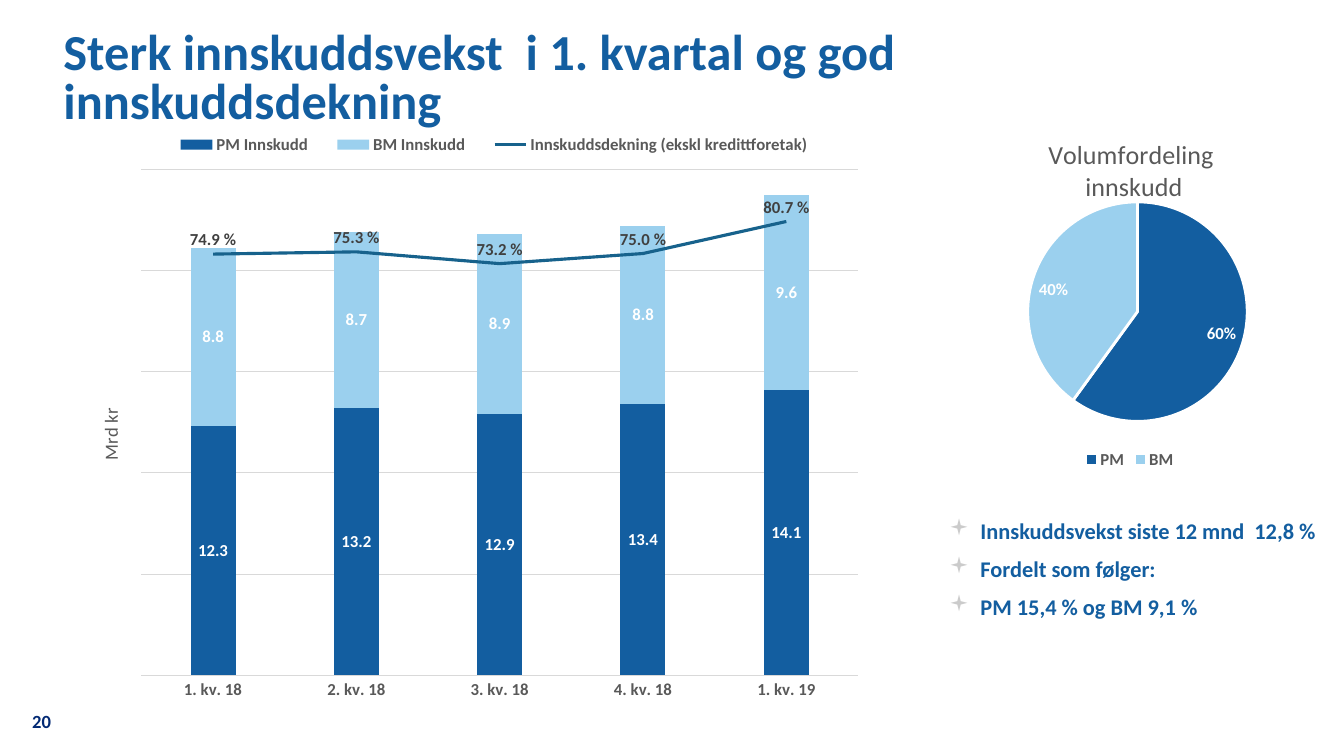
from dataclasses import dataclass

from pptx import Presentation
from pptx.chart.data import CategoryChartData
from pptx.dml.color import RGBColor
from pptx.enum.chart import XL_CHART_TYPE, XL_LABEL_POSITION, XL_LEGEND_POSITION
from pptx.enum.chart import XL_MARKER_STYLE, XL_TICK_LABEL_POSITION, XL_TICK_MARK
from pptx.oxml import parse_xml
from pptx.oxml.ns import nsdecls, qn
from pptx.oxml.xmlchemy import OxmlElement
from pptx.util import Cm, Pt


@dataclass(frozen=True)
class Theme:
    font: str = "Calibri"
    bullet_font: str = "Wingdings"
    blue: str = "135EA0"
    light_blue: str = "9BD0EE"
    line_blue: str = "17628C"
    navy: str = "032A74"
    grey: str = "595959"
    dark: str = "404040"
    rule: str = "D9D9D9"
    bullet: str = "CBCBCB"
    white: str = "FFFFFF"
    title_size: float = 36
    body_size: float = 16
    number_size: float = 13.3
    chart_title_size: float = 18.6
    axis_title_size: float = 13.3
    chart_size: float = 12


THEME = Theme()


def rgb(value):
    return RGBColor.from_string(value)


def style_font(font, size, color, bold=True):
    font.name = THEME.font
    font.size = Pt(size)
    font.bold = bold
    font.color.rgb = rgb(color)


def add_run(paragraph, text, size, color, bold=True):
    run = paragraph.add_run()
    run.text = text
    style_font(run.font, size, color, bold)


def add_text(slide, box, text, size, color, wrap=True, spacing=None):
    frame = slide.shapes.add_textbox(*map(Cm, box)).text_frame
    frame.word_wrap = wrap
    frame.margin_left = frame.margin_right = frame.margin_top = frame.margin_bottom = 0
    paragraph = frame.paragraphs[0]
    paragraph.line_spacing = spacing
    add_run(paragraph, text, size, color)


def add_bullet_mark(paragraph):
    properties = paragraph._p.get_or_add_pPr()
    properties.set("marL", str(Cm(0.79)))
    properties.set("indent", str(-Cm(0.79)))
    color = OxmlElement("a:buClr")
    value = OxmlElement("a:srgbClr")
    value.set("val", THEME.bullet)
    color.append(value)
    font = OxmlElement("a:buFont")
    font.set("typeface", THEME.bullet_font)
    mark = OxmlElement("a:buChar")
    mark.set("char", "▪")
    properties.extend([color, font, mark])


def add_bullets(slide, box, lines):
    frame = slide.shapes.add_textbox(*map(Cm, box)).text_frame
    frame.word_wrap = True
    for index, line in enumerate(lines):
        paragraph = frame.add_paragraph() if index else frame.paragraphs[0]
        if index:
            paragraph.space_before = Pt(8)
        add_bullet_mark(paragraph)
        add_run(paragraph, line, THEME.body_size, THEME.blue)


def set_layout(element, index, inner=False, **fractions):
    for old in element.findall(qn("c:layout")):
        element.remove(old)
    target = '<c:layoutTarget val="inner"/>' if inner else ""
    modes = "".join(f'<c:{key}Mode val="edge"/>' for key in fractions if key in "xy")
    values = "".join(f'<c:{key} val="{value}"/>' for key, value in fractions.items())
    element.insert(index, parse_xml(
        f'<c:layout {nsdecls("c")}><c:manualLayout>{target}{modes}{values}'
        "</c:manualLayout></c:layout>"))


def add_chart(slide, kind, box, categories, series, legend_position):
    data = CategoryChartData()
    data.categories = categories
    for name, values in series:
        data.add_series(name, values)
    chart = slide.shapes.add_chart(kind, *map(Cm, box), data).chart
    style_font(chart.font, THEME.chart_size, THEME.grey)
    chart.has_title = False
    chart.has_legend = True
    chart.legend.position = legend_position
    chart.legend.include_in_layout = False
    style_font(chart.legend.font, THEME.chart_size, THEME.grey)
    return chart


def label_series(series, number_format, color, position=None):
    labels = series.data_labels
    labels.show_value = True
    labels.number_format = number_format
    labels.number_format_is_linked = False
    style_font(labels.font, THEME.chart_size, color)
    if position is not None:
        labels.position = position


def fill_solid(item, color):
    item.format.fill.solid()
    item.format.fill.fore_color.rgb = rgb(color)


def move_to_line_plot(chart, series):
    element = series._element
    bar_chart = element.getparent()
    line_chart = parse_xml(
        f'<c:lineChart {nsdecls("c")}><c:grouping val="standard"/><c:varyColors val="0"/>'
        '<c:marker val="1"/><c:axId val="50010"/><c:axId val="50020"/></c:lineChart>')
    for invert in element.findall(qn("c:invertIfNegative")):
        element.remove(invert)
    line_chart.insert(2, element)
    bar_chart.addnext(line_chart)
    category_axis = parse_xml(
        f'<c:catAx {nsdecls("c")}><c:axId val="50010"/><c:scaling>'
        '<c:orientation val="minMax"/></c:scaling><c:delete val="1"/>'
        '<c:axPos val="b"/><c:crossAx val="50020"/></c:catAx>')
    value_axis = parse_xml(
        f'<c:valAx {nsdecls("c", "a")}><c:axId val="50020"/><c:scaling>'
        '<c:orientation val="minMax"/><c:max val="0.9"/><c:min val="0"/></c:scaling>'
        '<c:delete val="0"/><c:axPos val="r"/><c:majorTickMark val="out"/>'
        '<c:minorTickMark val="none"/><c:tickLblPos val="none"/>'
        '<c:spPr><a:ln><a:noFill/></a:ln></c:spPr>'
        '<c:crossAx val="50010"/><c:crosses val="max"/></c:valAx>')
    chart.value_axis._element.addnext(category_axis)
    category_axis.addnext(value_axis)


def style_axes(chart):
    category_axis, value_axis = chart.category_axis, chart.value_axis
    category_axis.major_tick_mark = XL_TICK_MARK.NONE
    style_font(category_axis.tick_labels.font, THEME.chart_size, THEME.grey)
    value_axis.minimum_scale, value_axis.maximum_scale, value_axis.major_unit = 0, 25, 5
    value_axis.tick_label_position = XL_TICK_LABEL_POSITION.NONE
    value_axis.format.line.fill.background()
    value_axis.has_major_gridlines = True
    for line in (category_axis.format.line, value_axis.major_gridlines.format.line):
        line.color.rgb = rgb(THEME.rule)
        line.width = Pt(0.75)
    title = value_axis.axis_title
    add_run(title.text_frame.paragraphs[0], "Mrd kr", THEME.axis_title_size, THEME.grey, False)
    body = title._element.find(".//" + qn("a:bodyPr"))
    body.set("rot", "-5400000")
    body.set("vert", "horz")
    set_layout(title._element, 1, x=0.01, y=0.47)


def add_deposit_chart(slide):
    chart = add_chart(
        slide, XL_CHART_TYPE.COLUMN_STACKED, (2.18, 3.12, 19.76, 15.06),
        ["1. kv. 18", "2. kv. 18", "3. kv. 18", "4. kv. 18", "1. kv. 19"],
        [("PM Innskudd", (12.3, 13.2, 12.9, 13.4, 14.1)),
         ("BM Innskudd", (8.8, 8.7, 8.9, 8.8, 9.6)),
         ("Innskuddsdekning (ekskl kredittforetak)", (0.749, 0.753, 0.732, 0.75, 0.807))],
        XL_LEGEND_POSITION.TOP)
    bars = chart.plots[0]
    bars.vary_by_categories = False
    bars.gap_width, bars.overlap = 219, 100
    style_axes(chart)
    move_to_line_plot(chart, bars.series[2])
    for series, color in zip(bars.series, (THEME.blue, THEME.light_blue)):
        fill_solid(series, color)
        label_series(series, "0.0", THEME.white)
    coverage = chart.plots[1].series[0]
    coverage.smooth = False
    coverage.marker.style = XL_MARKER_STYLE.NONE
    coverage.format.line.color.rgb = rgb(THEME.line_blue)
    coverage.format.line.width = Pt(2.25)
    label_series(coverage, r"0.0\ %", THEME.dark, XL_LABEL_POSITION.ABOVE)
    set_layout(chart.legend._element, 1, x=0.09, y=0.01, w=0.86, h=0.05)
    set_layout(bars._element.getparent(), 0, True, x=0.07, y=0.076, w=0.914, h=0.847)


def add_share_chart(slide):
    chart = add_chart(slide, XL_CHART_TYPE.PIE, (24.03, 3.2, 8.89, 8.74), ["PM", "BM"],
                      [("Series 1", (0.6, 0.4))], XL_LEGEND_POSITION.BOTTOM)
    title = chart.chart_title
    frame = title.text_frame
    for paragraph, text in zip((frame.paragraphs[0], frame.add_paragraph()),
                               ("Volumfordeling ", "innskudd")):
        add_run(paragraph, text, THEME.chart_title_size, THEME.grey, False)
    set_layout(title._element, 1, x=0.26, y=0.02)
    pie = chart.plots[0]
    pie.vary_by_categories = True
    series = pie.series[0]
    for index, color in enumerate((THEME.blue, THEME.light_blue)):
        point = series.points[index]
        fill_solid(point, color)
        point.format.line.color.rgb = rgb(THEME.white)
        point.format.line.width = Pt(2)
    label_series(series, "0%", THEME.white, XL_LABEL_POSITION.INSIDE_END)
    set_layout(pie._element.getparent(), 0, True, x=0.21, y=0.216, w=0.623, h=0.633)


def main():
    presentation = Presentation()
    presentation.slide_width, presentation.slide_height = Cm(33.87), Cm(19.05)
    slide = presentation.slides.add_slide(presentation.slide_layouts[6])
    add_text(slide, (0.81, 17.88, 0.56, 0.56), "20", THEME.number_size, THEME.navy, wrap=False)
    add_text(slide, (1.6, 0.81, 30, 2.49), "Sterk innskuddsvekst  i 1. kvartal og god innskuddsdekning",
             THEME.title_size, THEME.blue, spacing=0.8)
    add_bullets(slide, (23.67, 12.9, 10.03, 2.9), [
        "Innskuddsvekst siste 12 mnd  12,8 %", "Fordelt som følger:", "PM 15,4 % og BM 9,1 %"])
    add_deposit_chart(slide)
    add_share_chart(slide)
    presentation.save("out.pptx")


if __name__ == "__main__":
    main()
